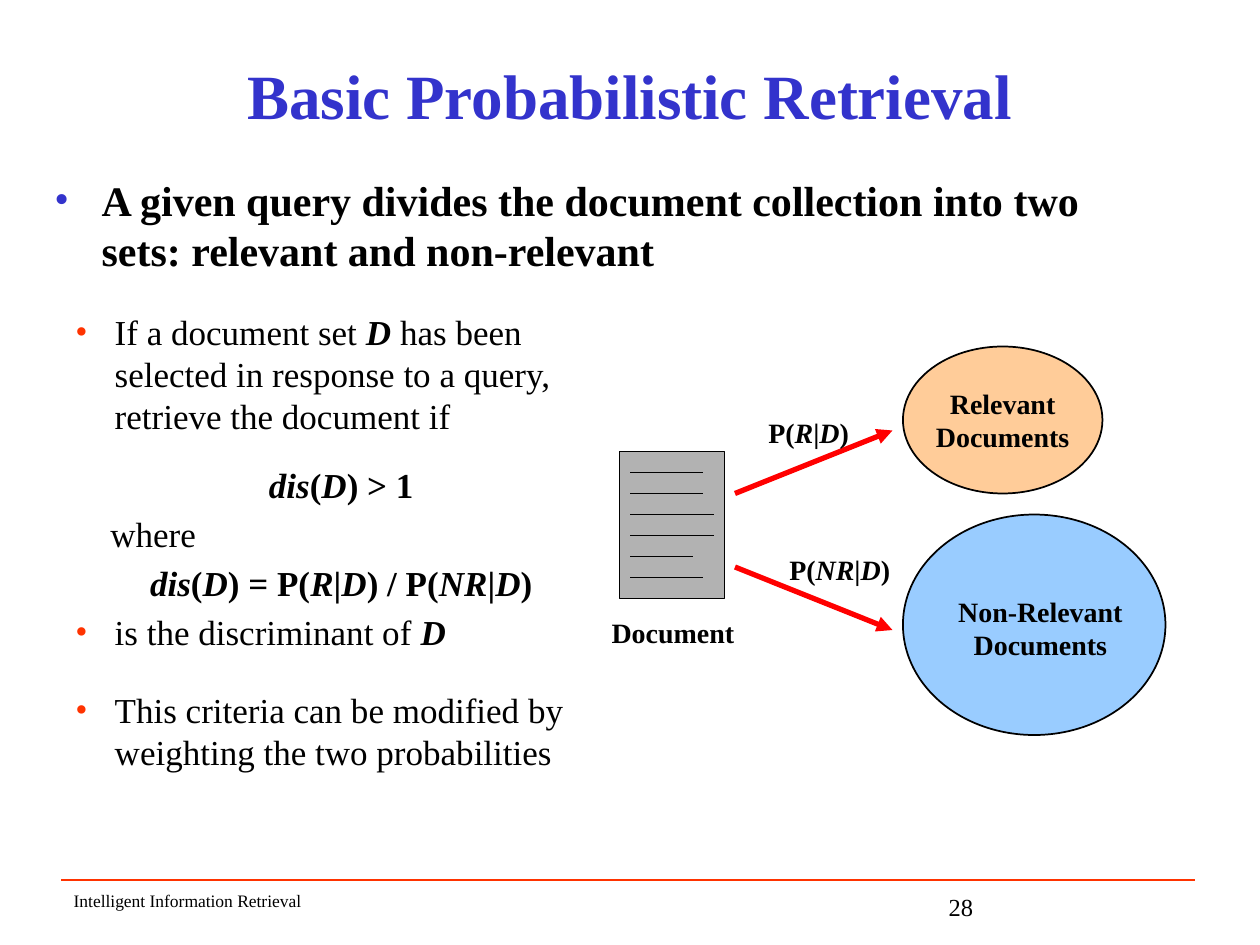
"""Build the slide on basic probabilistic retrieval."""
from lxml import etree
from pptx import Presentation
from pptx.dml.color import RGBColor
from pptx.enum import shapes, text
from pptx.oxml.ns import qn
from pptx.util import Pt

FONT = "Times New Roman"
BLACK = RGBColor(0, 0, 0)
BLUE = RGBColor(0x33, 0x33, 0xCC)
ORANGE = RGBColor(0xFF, 0x33, 0)
RED = RGBColor(0xFF, 0, 0)
GRAY = RGBColor(0xB2, 0xB2, 0xB2)
PEACH = RGBColor(0xFF, 0xCC, 0x99)
SKY = RGBColor(0x99, 0xCC, 0xFF)
LEFT, MID = text.PP_ALIGN.LEFT, text.PP_ALIGN.CENTER


def write(para, words, size=16, bold=False, color=BLACK, align=LEFT,
          before=0, margin=0, indent=0, bullet=None):
    """Fill a paragraph; words between underscores are bold italic."""
    para.alignment, para.space_before = align, Pt(before)
    props = para._p.get_or_add_pPr()
    props.set("marL", str(Pt(margin)))
    props.set("indent", str(Pt(indent)))
    if bullet is not None:
        tint = etree.SubElement(props, qn("a:buClr"))
        etree.SubElement(tint, qn("a:srgbClr"), val=str(bullet))
        etree.SubElement(props, qn("a:buFont"), typeface=FONT)
        etree.SubElement(props, qn("a:buChar"), char="•")
    for spot, part in enumerate(words.split("_")):
        if part:
            run = para.add_run()
            run.text = part
            font = run.font
            font.name, font.size, font.color.rgb = FONT, Pt(size), color
            font.italic = spot % 2 == 1
            font.bold = bold or font.italic


def fill(frame, lines, **form):
    """Write one paragraph for each line, all in the same format."""
    for spot, line in enumerate(lines):
        para = frame.add_paragraph() if spot else frame.paragraphs[0]
        write(para, line, **form)


def label(slide, box, *lines, wrap=False, anchor=text.MSO_ANCHOR.TOP, **form):
    """Add a text box and return its frame."""
    frame = slide.shapes.add_textbox(*map(Pt, box)).text_frame
    frame.word_wrap, frame.vertical_anchor = wrap, anchor
    fill(frame, lines, **form)
    return frame


def block(group, kind, box, color):
    """Add a filled shape with a thin black outline."""
    shape = group.add_shape(kind, *map(Pt, box))
    shape.shadow.inherit = False
    shape.fill.solid()
    shape.fill.fore_color.rgb = color
    shape.line.color.rgb, shape.line.width = BLACK, Pt(1)
    return shape


def rule(group, ends, color=BLACK, width=1, arrow=False):
    """Add a straight line, with an arrowhead on request."""
    line = group.add_connector(shapes.MSO_CONNECTOR.STRAIGHT, *map(Pt, ends))
    line.line.color.rgb, line.line.width = color, Pt(width)
    if arrow:
        etree.SubElement(line.line._get_or_add_ln(), qn("a:tailEnd"), type="triangle")
    etree.SubElement(line._element.spPr, qn("a:effectLst"))


def page(slide):
    """Add the document icon with its lines of text."""
    group = slide.shapes.add_group_shape().shapes
    block(group, shapes.MSO_SHAPE.RECTANGLE, (354, 258, 60, 84), GRAY)
    for row, size in enumerate((42, 42, 48, 48, 36, 42)):
        y = 270 + 12 * row
        rule(group, (360, y, 360 + size, y))


def points(slide):
    """Add the list with the retrieval rule."""
    item = dict(size=20, before=4, margin=58.5, indent=-22.5)
    dot = dict(item, bullet=ORANGE)
    form = dict(item, bold=True, align=MID)
    frame = label(slide, (0, 174, 354, 294),
                  "If a document set _D_ has been selected in response to a query, "
                  "retrieve the document if", wrap=True, **dot)
    for words, style in (
            ("_dis_(_D_) > 1", dict(form, before=15.5)),
            ("where", dict(item, margin=56, indent=0)),
            ("_dis_(_D_) = P(_R_|_D_) / P(_NR_|_D_)", form),
            ("is the discriminant of _D_", dot),
            ("This criteria can be modified by weighting the two probabilities",
             dict(dot, before=20.5))):
        write(frame.add_paragraph(), words, **style)


def main():
    """Build and save the slide."""
    deck = Presentation()
    deck.slide_width, deck.slide_height = Pt(720), Pt(540)
    slide = deck.slides.add_slide(deck.slide_layouts[6])
    rule(slide.shapes, (35, 503, 683, 503), ORANGE)
    label(slide, (35, 505, 270, 18), "Intelligent Information Retrieval", size=10, wrap=True)
    label(slide, (535, 506, 150, 18), "28", size=14, wrap=True)
    label(slide, (54, 24, 612, 60), "Basic Probabilistic Retrieval", wrap=True,
          anchor=text.MSO_ANCHOR.MIDDLE, size=36, bold=True, color=BLUE, align=MID)
    label(slide, (24, 96, 612, 60),
          "A given query divides the document collection into two sets: "
          "relevant and non-relevant", wrap=True, size=24, bold=True,
          before=4.8, margin=27, indent=-27, bullet=BLUE)

    oval = shapes.MSO_SHAPE.OVAL
    frame = block(slide.shapes, oval, (516, 198, 114, 84), PEACH).text_frame
    frame.word_wrap, frame.vertical_anchor = False, text.MSO_ANCHOR.MIDDLE
    fill(frame, ("Relevant", "Documents"), bold=True, align=MID)
    block(slide.shapes, oval, (516, 294, 150, 126), SKY)
    label(slide, (540, 336, 109, 46), "Non-Relevant", "Documents", bold=True, align=MID)

    page(slide)
    label(slide, (342, 348, 85, 27), "Document", bold=True, align=MID)
    for start, end in ((282, 246), (324, 360)):
        rule(slide.shapes, (420, start, 510, end), RED, 3, arrow=True)
    for left, top, words in ((432, 234, "P(_R_|_D_)"), (444, 312, "P(_NR_|_D_)")):
        label(slide, (left, top, 72, 27), words, bold=True)
    points(slide)
    deck.save("out.pptx")


if __name__ == "__main__":
    main()
